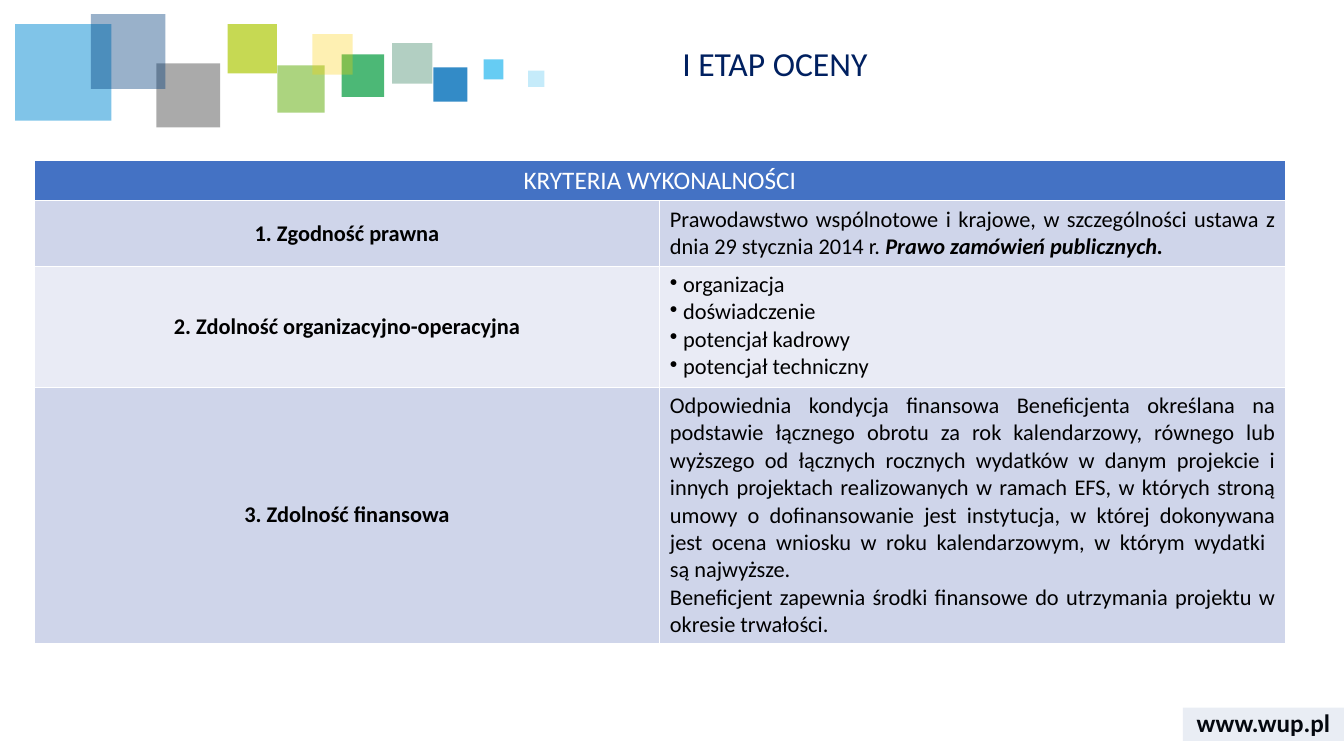
from dataclasses import dataclass

from lxml import etree
from pptx import Presentation
from pptx.dml.color import RGBColor
from pptx.enum import shapes, text
from pptx.oxml import ns
from pptx.util import Cm, Pt


@dataclass(frozen=True)
class Theme:
    """Hold the colours and type sizes of the slide."""
    font: str = "Calibri"
    navy: str = "002060"
    black: str = "000000"
    white: str = "FFFFFF"
    header: str = "4472C4"
    bands: tuple = ("CFD5EA", "E9EBF5")
    plate: str = "2F5597"
    title_size: int = 24
    header_size: int = 18
    body_size: int = 16


THEME = Theme()
LEFT, CENTER, JUSTIFY = (
    text.PP_ALIGN.LEFT, text.PP_ALIGN.CENTER, text.PP_ALIGN.JUSTIFY)

MOSAIC = [
    (9.88, 1.09, 1.02, "006138", 30),
    (10.92, 1.7, 0.86, "006EB9", 80),
    (8.61, 1.37, 1.07, "009A3C", 70),
    (0.38, 0.61, 2.43, "028BD3", 50),
    (6.99, 1.65, 1.19, "75B82A", 60),
    (3.94, 1.6, 1.61, "575757", 50),
    (2.29, 0.36, 1.88, "003D7C", 40),
    (12.19, 1.5, 0.5, "40C0F1", 80),
    (5.74, 0.61, 1.24, "AFCA0B", 70),
    (7.87, 0.86, 1.02, "FED000", 30),
    (13.31, 1.78, 0.41, "40C0F1", 30),
]

LEGAL = [[("Prawodawstwo wspólnotowe i krajowe, w szczególności ustawa "
           "z dnia 29 stycznia 2014 r. ", False),
          ("Prawo zamówień publicznych.", True)]]
CAPACITY = [[(item, False)] for item in (
    "organizacja", "doświadczenie", "potencjał kadrowy", "potencjał techniczny")]
FINANCE = [
    [("Odpowiednia kondycja finansowa Beneficjenta określana na podstawie "
      "łącznego obrotu za rok kalendarzowy, równego lub wyższego od łącznych "
      "rocznych wydatków w danym projekcie i innych projektach realizowanych "
      "w ramach EFS, w których stroną umowy o dofinansowanie jest instytucja, "
      "w której dokonywana jest ocena wniosku w roku kalendarzowym, "
      "w którym wydatki \nsą najwyższe.", False)],
    [("Beneficjent zapewnia środki finansowe do utrzymania projektu "
      "w okresie trwałości.", False)],
]
CRITERIA = [
    ("1. Zgodność prawna", LEGAL, False, 1.65),
    ("2. Zdolność organizacyjno-operacyjna", CAPACITY, True, 3.05),
    ("3. Zdolność finansowa", FINANCE, False, 6.45),
]


def add_run(paragraph, wording, size, color, bold=False, italic=False):
    """Add formatted wording, turning newlines into line breaks."""
    for index, line in enumerate(wording.split("\n")):
        if index:
            paragraph.add_line_break()
        run = paragraph.add_run()
        run.text = line
        run.font.name = THEME.font
        run.font.size = Pt(size)
        run.font.bold = bold
        run.font.italic = italic
        run.font.color.rgb = RGBColor.from_string(color)


def add_bullet(paragraph):
    """Give a paragraph a round bullet with a narrow hanging indent."""
    properties = paragraph._p.get_or_add_pPr()
    properties.set("marL", str(Cm(0.33)))
    properties.set("indent", str(-Cm(0.33)))
    etree.SubElement(properties, ns.qn("a:buChar")).set("char", "•")


def add_tint(parent, left, top, width, height, color, opacity):
    """Draw a translucent rectangle without an outline."""
    tint = parent.add_shape(
        shapes.MSO_SHAPE.RECTANGLE, Cm(left), Cm(top), Cm(width), Cm(height))
    tint.shadow.inherit = False
    tint.line.fill.background()
    tint.fill.solid()
    tint.fill.fore_color.rgb = RGBColor.from_string(color)
    swatch = tint.fill._xPr.find(".//" + ns.qn("a:srgbClr"))
    etree.SubElement(swatch, ns.qn("a:alpha")).set("val", str(opacity * 1000))


def add_mosaic(slide):
    """Draw the group of coloured squares."""
    mosaic = slide.shapes.add_group_shape()
    for left, top, side, color, opacity in MOSAIC:
        add_tint(mosaic.shapes, left, top, side, side, color, opacity)


def add_address(slide):
    """Place the web address and its pale plate."""
    address = slide.shapes.add_textbox(Cm(29.81), Cm(17.7), Cm(4.06), Cm(1.02))
    frame = address.text_frame
    frame.word_wrap = True
    frame.vertical_anchor = text.MSO_ANCHOR.MIDDLE
    frame.paragraphs[0].alignment = CENTER
    add_run(frame.paragraphs[0], "www.wup.pl", THEME.header_size, THEME.black, True)
    add_tint(slide.shapes, 29.81, 17.83, 4.06, 0.84, THEME.plate, 10)


def set_title(slide):
    """Move and format the title placeholder."""
    title = slide.shapes.title
    title.left, title.top = Cm(16.94), Cm(1.07)
    title.width, title.height = Cm(16.15), Cm(1.4)
    frame = title.text_frame
    frame.auto_size = text.MSO_AUTO_SIZE.NONE
    frame.vertical_anchor = text.MSO_ANCHOR.TOP
    heading = frame.paragraphs[0]
    heading.alignment = LEFT
    heading.line_spacing = 0.9
    add_run(heading, "I ETAP OCENY", THEME.title_size, THEME.navy)


def fill_cell(cell, color):
    """Give a table cell a solid fill."""
    cell.fill.solid()
    cell.fill.fore_color.rgb = RGBColor.from_string(color)


def write_details(cell, details, bulleted):
    """Write justified paragraphs, with bullets where asked."""
    frame = cell.text_frame
    for index, pieces in enumerate(details):
        paragraph = frame.add_paragraph() if index else frame.paragraphs[0]
        paragraph.alignment = JUSTIFY
        if bulleted:
            add_bullet(paragraph)
        for wording, strong in pieces:
            add_run(paragraph, wording, THEME.body_size, THEME.black, strong, strong)


def add_criteria(slide):
    """Build the table of feasibility criteria."""
    criteria = slide.shapes.add_table(
        len(CRITERIA) + 1, 2, Cm(0.86), Cm(4.04), Cm(31.54), Cm(12.15)).table
    criteria.rows[0].height = Cm(1)
    header = criteria.cell(0, 0)
    header.merge(criteria.cell(0, 1))
    fill_cell(header, THEME.header)
    caption = header.text_frame.paragraphs[0]
    caption.alignment = CENTER
    add_run(caption, "KRYTERIA WYKONALNOŚCI", THEME.header_size, THEME.white)
    for row, (label, details, bulleted, height) in enumerate(CRITERIA, 1):
        criteria.rows[row].height = Cm(height)
        name, description = criteria.cell(row, 0), criteria.cell(row, 1)
        for cell in (name, description):
            fill_cell(cell, THEME.bands[(row - 1) % 2])
        name.vertical_anchor = text.MSO_ANCHOR.MIDDLE
        name.text_frame.paragraphs[0].alignment = CENTER
        add_run(name.text_frame.paragraphs[0], label, THEME.body_size, THEME.black, True)
        write_details(description, details, bulleted)


def main():
    """Assemble the slide and save it."""
    deck = Presentation()
    deck.slide_width, deck.slide_height = Cm(33.87), Cm(19.05)
    slide = deck.slides.add_slide(deck.slide_layouts[5])
    add_address(slide)
    add_mosaic(slide)
    add_criteria(slide)
    set_title(slide)
    deck.save("out.pptx")


if __name__ == "__main__":
    main()
